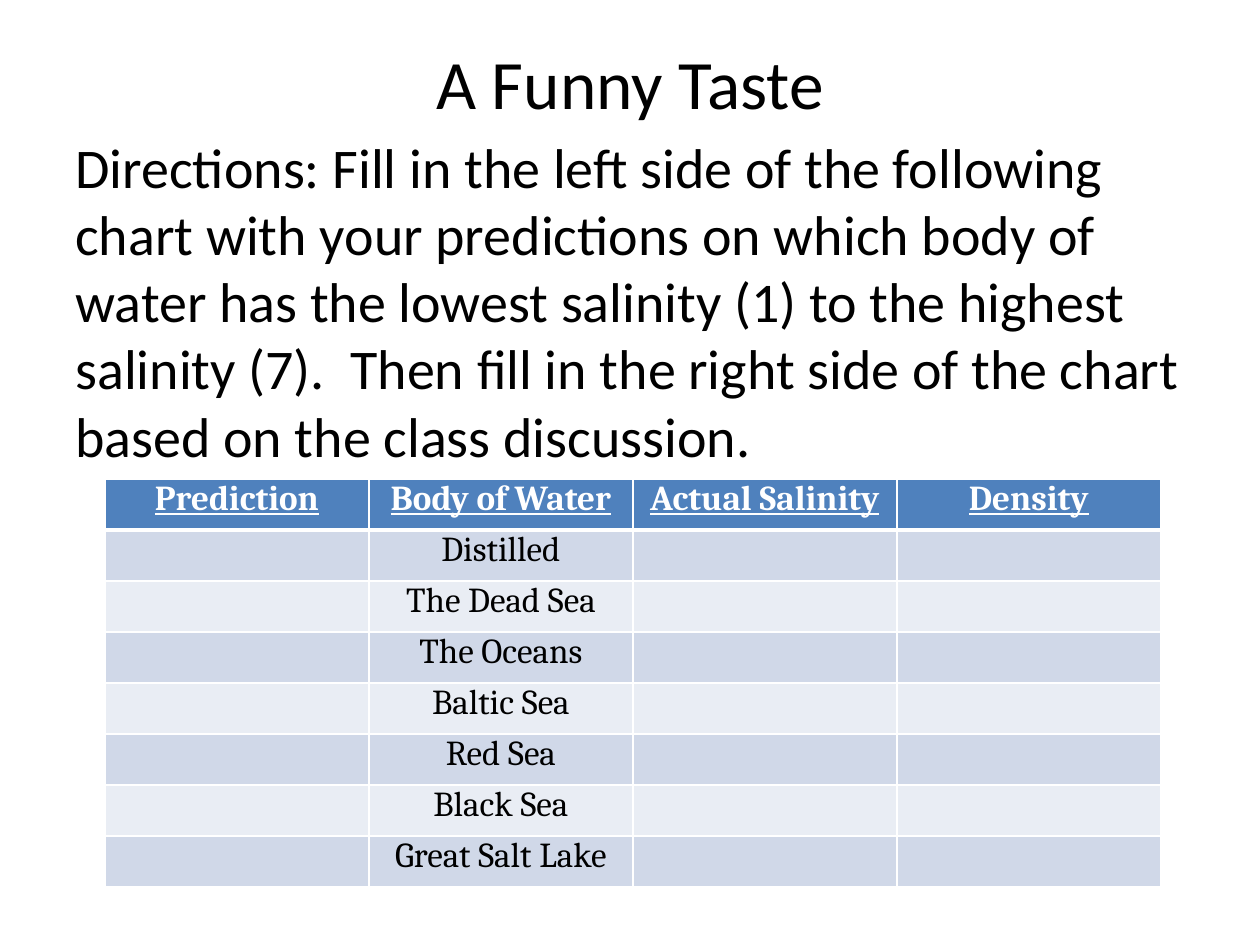
from dataclasses import dataclass

from lxml import etree
from pptx import Presentation
from pptx import util as u
from pptx.dml.color import RGBColor
from pptx.enum import text
from pptx.oxml import ns

PX = 914400 / 126


@dataclass(frozen=True)
class Theme:
    text_font: str = "Calibri"
    table_font: str = "Cambria"
    ink: str = "000000"
    white: str = "FFFFFF"
    header: str = "4F81BD"
    bands: tuple = ("D0D8E8", "E9EDF4")
    title_size: float = 39.6
    body_size: int = 32
    table_size: int = 20


THEME = Theme()
TITLE = "A Funny Taste"
DIRECTIONS = (
    "Directions: Fill in the left side of the following chart with your "
    "predictions on which body of water has the lowest salinity (1) to the "
    "highest salinity (7).  Then fill in the right side of the chart based on "
    "the class discussion."
)
HEADINGS = ["Prediction", "Body of Water", "Actual Salinity", "Density"]
WATERS = ["Distilled", "The Dead Sea", "The Oceans", "Baltic Sea",
          "Red Sea", "Black Sea", "Great Salt Lake"]


def px(length):
    return u.Emu(round(length * PX))


def add_child(parent, tag, **attributes):
    child = etree.SubElement(parent, ns.qn(tag))
    for name, value in attributes.items():
        child.set(name, str(value))
    return child


def write(frame, wording, *, size, font, color=THEME.ink, align=None,
          bold=False, underline=False, before=None):
    """Write one paragraph; before is its space above in percent of a line."""
    paragraph = frame.paragraphs[0]
    paragraph.alignment = align
    if before:
        spacing = add_child(paragraph._p.get_or_add_pPr(), "a:spcBef")
        add_child(spacing, "a:spcPct", val=before * 1000)
    run = paragraph.add_run()
    run.text = wording
    run.font.size = u.Pt(size)
    run.font.name = font
    run.font.bold = bold
    run.font.underline = underline
    run.font.color.rgb = RGBColor.from_string(color)


def add_text(slide, box, wording, anchor=text.MSO_ANCHOR.TOP, **style):
    frame = slide.shapes.add_textbox(*map(px, box)).text_frame
    frame.word_wrap = True
    frame.vertical_anchor = anchor
    write(frame, wording, **style)


def set_borders(cell, bottom, top):
    widths = {"a:lnL": 1, "a:lnR": 1, "a:lnT": top, "a:lnB": bottom}
    for tag, width in widths.items():
        line = add_child(cell._tc.get_or_add_tcPr(), tag, w=u.Pt(width))
        add_child(add_child(line, "a:solidFill"), "a:srgbClr", val=THEME.white)


def format_cell(cell, row):
    cell.margin_left = cell.margin_right = px(9)
    cell.margin_top = cell.margin_bottom = 0
    set_borders(cell, bottom=3 if row == 0 else 1, top=3 if row == 1 else 1)
    cell.fill.solid()
    color = THEME.bands[(row - 1) % 2] if row else THEME.header
    cell.fill.fore_color.rgb = RGBColor.from_string(color)


def add_salinity_table(slide, left, top, column_width, row_height):
    rows = [HEADINGS] + [["", water, "", ""] for water in WATERS]
    table = slide.shapes.add_table(
        len(rows), len(HEADINGS), px(left), px(top),
        px(column_width * len(HEADINGS)), px(row_height * len(rows))).table
    for column in table.columns:
        column.width = px(column_width)
    for r, wordings in enumerate(rows):
        table.rows[r].height = px(row_height)
        is_header = r == 0
        for c, wording in enumerate(wordings):
            cell = table.cell(r, c)
            format_cell(cell, r)
            if wording:
                write(cell.text_frame, wording, size=THEME.table_size,
                      font=THEME.table_font, align=text.PP_ALIGN.CENTER,
                      color=THEME.white if is_header else THEME.ink,
                      bold=is_header, underline=is_header)


def main():
    deck = Presentation()
    deck.slide_width, deck.slide_height = px(1260), px(945)
    slide = deck.slides.add_slide(deck.slide_layouts[6])
    add_text(slide, (63, 38, 1134, 88), TITLE, anchor=text.MSO_ANCHOR.MIDDLE,
             size=THEME.title_size, font=THEME.text_font,
             align=text.PP_ALIGN.CENTER)
    add_text(slide, (63, 126, 1134, 718), DIRECTIONS, size=THEME.body_size,
             font=THEME.text_font, before=20)
    add_salinity_table(slide, left=105, top=479, column_width=264, row_height=51)
    deck.save("out.pptx")


if __name__ == "__main__":
    main()
